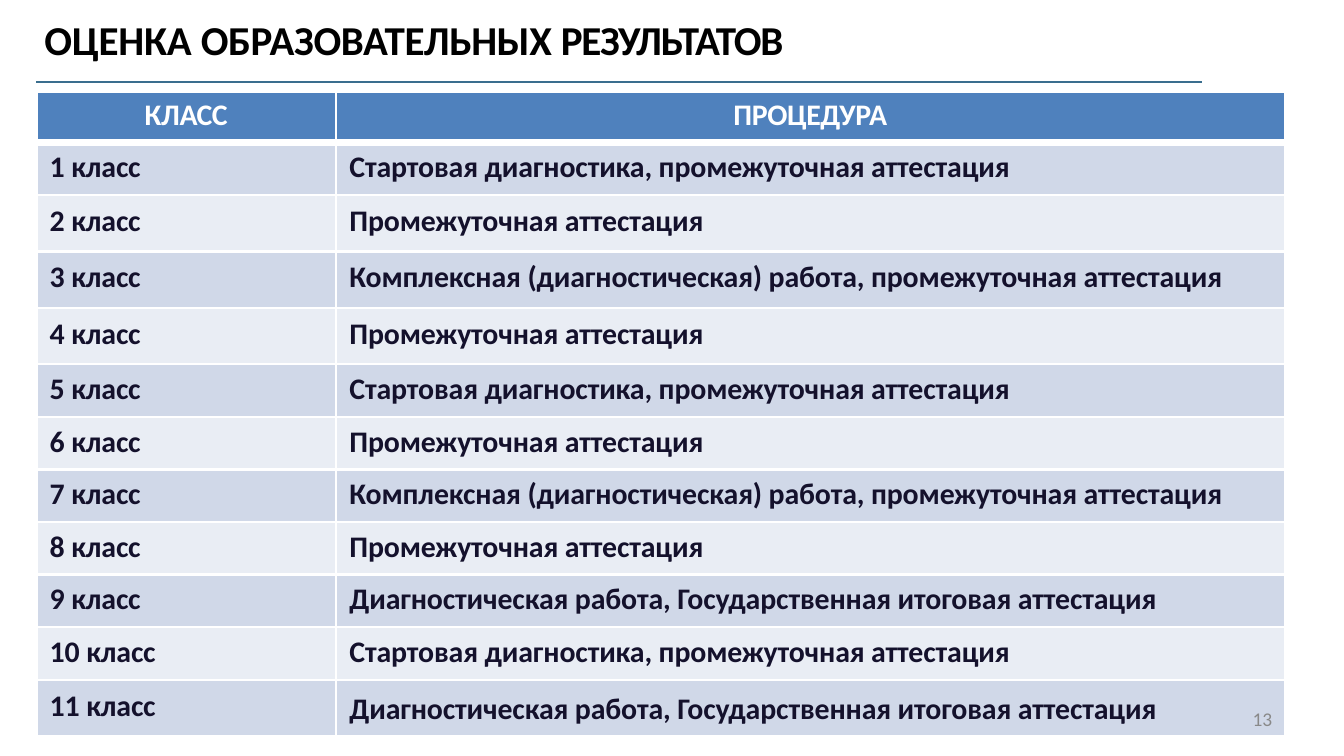
from pptx import Presentation
from pptx.dml.color import RGBColor
from pptx.enum.shapes import MSO_CONNECTOR
from pptx.enum.text import MSO_ANCHOR, MSO_AUTO_SIZE, PP_ALIGN
from pptx.oxml.ns import qn
from pptx.util import Inches, Pt
from lxml.etree import SubElement

FONT = "Calibri"
WHITE = RGBColor(0xFF, 0xFF, 0xFF)
BLACK = RGBColor(0, 0, 0)
INK = RGBColor(0x14, 0x11, 0x2C)
GRAY = RGBColor(0x89, 0x89, 0x89)
RULE = RGBColor(0x3A, 0x6E, 0x8E)
HEADER = RGBColor(0x4F, 0x81, 0xBD)
BANDS = [RGBColor(0xD0, 0xD8, 0xE8), RGBColor(0xE9, 0xED, 0xF4)]

START = "Стартовая диагностика, промежуточная аттестация"
INTERIM = "Промежуточная аттестация"
COMPLEX = "Комплексная (диагностическая) работа, промежуточная аттестация"
FINAL = "Диагностическая работа, Государственная итоговая аттестация"
PROCEDURES = [START, INTERIM, COMPLEX, INTERIM, START, INTERIM,
              COMPLEX, INTERIM, FINAL, START, FINAL]
TALL_ROWS = {2, 3, 4, 11}
HEADER_HEIGHT, TALL_HEIGHT = 0.38, 0.42
PAGE_NUMBER = "13"


def add_run(p, text, size, color, bold=True, spacing=0):
    r = p.add_run()
    r.text = text
    r.font.name = FONT
    r.font.size = Pt(size)
    r.font.bold = bold
    r.font.color.rgb = color
    r._r.get_or_add_rPr().set("spc", str(round(spacing * 100)))
    return r


def set_border(cell, side, width):
    ln = SubElement(cell._tc.get_or_add_tcPr(), qn(f"a:ln{side}"), w=str(Pt(width)))
    fill = SubElement(ln, qn("a:solidFill"))
    SubElement(fill, qn("a:srgbClr"), val=str(WHITE))


def format_cell(cell, fill, top_inset, top_border=1.5, bottom_border=1.5):
    cell.margin_left = cell.margin_right = cell.margin_bottom = 0
    cell.margin_top = Inches(top_inset)
    cell.vertical_anchor = MSO_ANCHOR.TOP
    for side, width in zip("LRTB", (1.5, 1.5, top_border, bottom_border)):
        set_border(cell, side, width)
    cell.fill.solid()
    cell.fill.fore_color.rgb = fill


def add_page_number(p):
    pPr = p._p.get_or_add_pPr()
    tabs = SubElement(pPr, qn("a:tabLst"))
    SubElement(tabs, qn("a:tab"), pos=str(Inches(6.72)), algn="l")
    p.runs[0].text += "\t"
    r = add_run(p, PAGE_NUMBER, 18, GRAY, bold=False)
    r._r.get_or_add_rPr().set("baseline", "-21000")


def add_title(s, left, top, width, height):
    title = s.shapes.title
    title.left, title.top = Inches(left), Inches(top)
    title.width, title.height = Inches(width), Inches(height)
    tf = title.text_frame
    tf.margin_left = tf.margin_right = tf.margin_bottom = 0
    tf.margin_top = Inches(0.01)
    tf.word_wrap = True
    tf.vertical_anchor = MSO_ANCHOR.TOP
    tf.auto_size = MSO_AUTO_SIZE.SHAPE_TO_FIT_TEXT
    p = tf.paragraphs[0]
    p.alignment = PP_ALIGN.LEFT
    p.space_before = Pt(1)
    p._p.get_or_add_pPr().set("marL", str(Inches(0.01)))
    for text, spacing in (("ОЦЕНКА ", -0.1), ("ОБРАЗОВАТЕЛЬНЫХ ", -0.2),
                          ("РЕЗУЛЬТАТОВ", -0.7)):
        add_run(p, text, 22, BLACK, spacing=spacing)


def add_rule(s, left, top, width):
    line = s.shapes.add_connector(MSO_CONNECTOR.STRAIGHT, Inches(left), Inches(top),
                                  Inches(left + width), Inches(top))
    line.line.color.rgb = RULE
    line.line.width = Pt(1.25)
    SubElement(line._element.spPr, qn("a:effectLst"))


def add_procedure_table(s, left, top, width, height):
    rows = len(PROCEDURES) + 1
    table = s.shapes.add_table(rows, 2, Inches(left), Inches(top),
                               Inches(width), Inches(height)).table
    table.columns[0].width = Inches(2.23)
    table.columns[1].width = Inches(width - 2.23)
    plain_rows = len(PROCEDURES) - len(TALL_ROWS)
    plain_height = (height - HEADER_HEIGHT - TALL_HEIGHT * len(TALL_ROWS)) / plain_rows

    table.rows[0].height = Inches(HEADER_HEIGHT)
    for cell, text, spacing in zip(table.rows[0].cells, ("КЛАСС", "ПРОЦЕДУРА"),
                                   (-0.1, -0.2)):
        format_cell(cell, HEADER, 0.04, bottom_border=4.25)
        p = cell.text_frame.paragraphs[0]
        p.alignment = PP_ALIGN.CENTER
        add_run(p, text, 16, WHITE, spacing=spacing)

    for grade, procedure in enumerate(PROCEDURES, 1):
        tall = grade in TALL_ROWS
        table.rows[grade].height = Inches(TALL_HEIGHT if tall else plain_height)
        for cell, text in zip(table.rows[grade].cells, (f"{grade} класс", procedure)):
            format_cell(cell, BANDS[(grade - 1) % 2], 0.06 if tall else 0.05,
                        top_border=4.25 if grade == 1 else 1.5)
            p = cell.text_frame.paragraphs[0]
            p._p.get_or_add_pPr().set("marL", str(Inches(0.1)))
            add_run(p, text, 16, INK, spacing=-0.05)
    add_page_number(table.cell(rows - 1, 1).text_frame.paragraphs[0])


def main():
    prs = Presentation()
    prs.slide_width = Inches(10)
    prs.slide_height = prs.slide_width * 9 // 16
    s = prs.slides.add_slide(prs.slide_layouts[5])
    add_procedure_table(s, 0.27, 0.68, 9.29, 4.8)
    add_title(s, 0.32, 0.1, 5.69, 0.39)
    add_rule(s, 0.27, 0.61, 8.67)
    prs.save("out.pptx")


if __name__ == "__main__":
    main()
